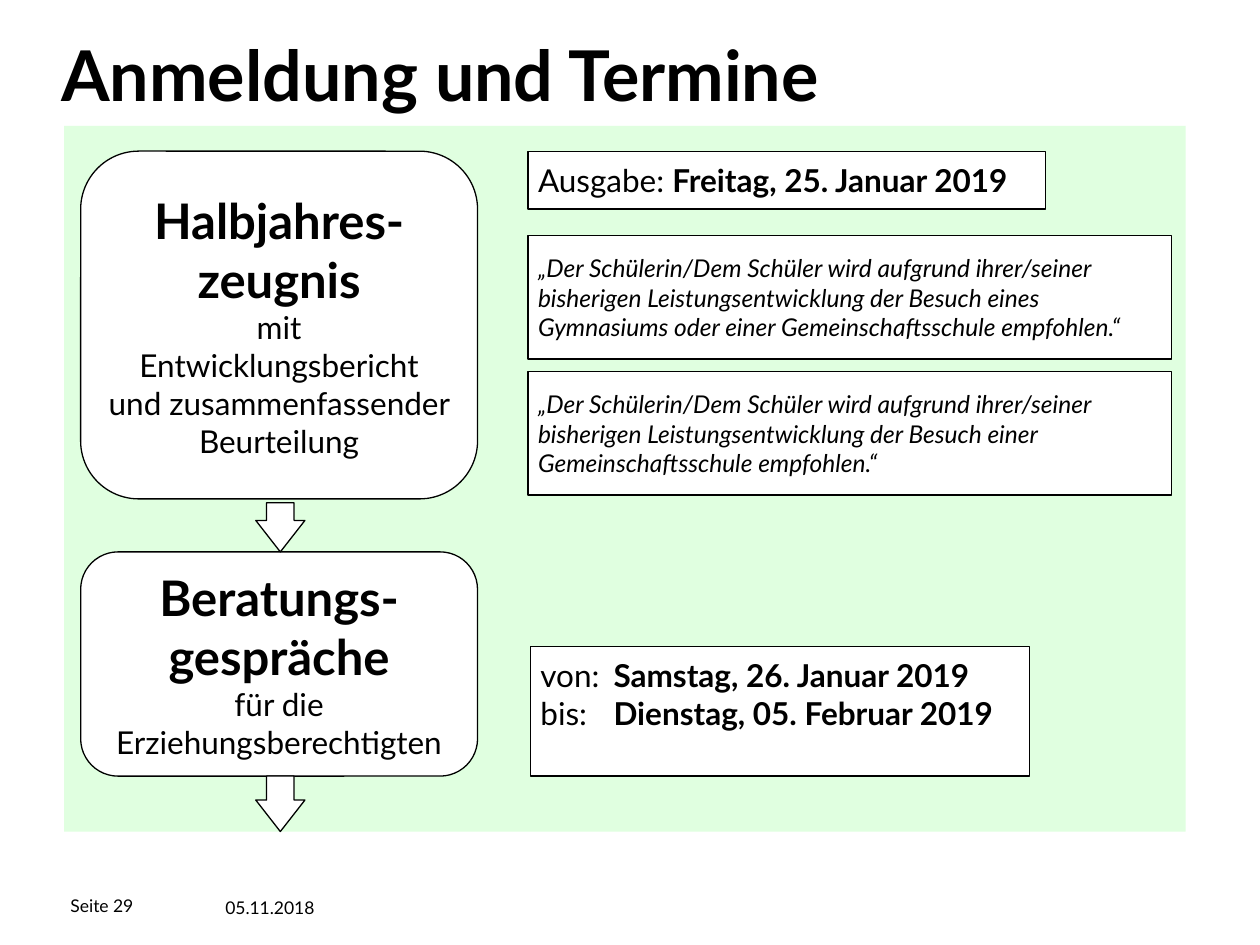
import pptx
import pptx.dml.color
import pptx.enum.shapes
import pptx.enum.text
import pptx.oxml
import pptx.oxml.ns
import pptx.util
from pptx.util import Inches

BLACK = pptx.dml.color.RGBColor(0x00, 0x00, 0x00)
WHITE = pptx.dml.color.RGBColor(0xFF, 0xFF, 0xFF)
GREEN = pptx.dml.color.RGBColor(0xCC, 0xFF, 0xCC)
FONT = "Lato"
SHAPES = pptx.enum.shapes.MSO_SHAPE
ANCHOR = pptx.enum.text.MSO_ANCHOR
ALIGN = pptx.enum.text.PP_ALIGN

STEP_LEFT, STEP_WIDTH = 0.64, 3.15
NOTE_LEFT = 4.19
ARROW_LEFT, ARROW_WIDTH = 2.03, 0.39
TAB_POSITION = 0.58


def add_box(slide, kind, left, top, width, height, fill=WHITE, outlined=True):
    shape = slide.shapes.add_shape(
        kind, Inches(left), Inches(top), Inches(width), Inches(height))
    shape.shadow.inherit = False
    shape.fill.solid()
    shape.fill.fore_color.rgb = fill
    if outlined:
        shape.line.color.rgb = BLACK
        shape.line.width = pptx.util.Pt(0.75)
    else:
        shape.line.fill.background()
    return shape


def set_frame(shape, margin_x, margin_y, anchor):
    frame = shape.text_frame
    frame.word_wrap = True
    frame.vertical_anchor = anchor
    frame.margin_left = frame.margin_right = Inches(margin_x)
    frame.margin_top = frame.margin_bottom = Inches(margin_y)
    return frame


def format_paragraph(paragraph, size, bold=False, italic=False, align=ALIGN.LEFT):
    paragraph.alignment = align
    for run in paragraph.runs:
        font = run.font
        font.name, font.size, font.color.rgb = FONT, pptx.util.Pt(size), BLACK
        font.bold, font.italic = bold, italic


def add_label(slide, text, left, top, width, height, size, bold=False,
              margins=(0.1, 0.05), anchor=ANCHOR.TOP):
    box = slide.shapes.add_textbox(
        Inches(left), Inches(top), Inches(width), Inches(height))
    frame = set_frame(box, *margins, anchor)
    frame.text = text
    format_paragraph(frame.paragraphs[0], size, bold)


def add_panel(slide):
    """Add the half-transparent green background area."""
    panel = add_box(slide, SHAPES.RECTANGLE, 0.51, 1, 8.9, 5.6, GREEN, outlined=False)
    color = panel.fill._xPr.find(".//" + pptx.oxml.ns.qn("a:srgbClr"))
    color.append(pptx.oxml.parse_xml(
        f'<a:alpha {pptx.oxml.ns.nsdecls("a")} val="60000"/>'))


def add_step(slide, top, height, margin_y, heading, detail):
    step = add_box(slide, SHAPES.ROUNDED_RECTANGLE, STEP_LEFT, top, STEP_WIDTH, height)
    step.adjustments[0] = 0.167
    frame = set_frame(step, 0.04, margin_y, ANCHOR.MIDDLE)
    frame.text = heading
    format_paragraph(frame.paragraphs[0], 28, bold=True, align=ALIGN.CENTER)
    paragraph = frame.add_paragraph()
    paragraph.text = detail
    format_paragraph(paragraph, 18, align=ALIGN.CENTER)


def add_quote(slide, top, text):
    quote = add_box(slide, SHAPES.RECTANGLE, NOTE_LEFT, top, 5.11, 0.98)
    frame = set_frame(quote, 0.08, 0.08, ANCHOR.MIDDLE)
    frame.text = text
    format_paragraph(frame.paragraphs[0], 14, italic=True)


def add_tab_stop(paragraph):
    properties = paragraph._p.get_or_add_pPr()
    properties.append(pptx.oxml.parse_xml(
        f'<a:tabLst {pptx.oxml.ns.nsdecls("a")}>'
        f'<a:tab pos="{Inches(TAB_POSITION)}" algn="l"/></a:tabLst>'))


def add_dates(slide, left, top, width, height, entries, anchor):
    """Add a box with one line per entry: a plain label and a bold date."""
    box = add_box(slide, SHAPES.RECTANGLE, left, top, width, height)
    frame = set_frame(box, 0.08, 0.08, anchor)
    for index, (label, date) in enumerate(entries):
        paragraph = frame.add_paragraph() if index else frame.paragraphs[0]
        if label.endswith("\t"):
            add_tab_stop(paragraph)
        paragraph.text = label
        paragraph.add_run().text = date
        format_paragraph(paragraph, 18)
        paragraph.runs[-1].font.bold = True


def add_arrow(slide, top, height):
    arrow = add_box(slide, SHAPES.DOWN_ARROW, ARROW_LEFT, top, ARROW_WIDTH, height)
    arrow.adjustments[0] = 0.56
    arrow.adjustments[1] = 0.64


def main():
    presentation = pptx.Presentation()
    presentation.slide_width, presentation.slide_height = Inches(10), Inches(7.5)
    slide = presentation.slides.add_slide(presentation.slide_layouts[6])

    add_label(slide, "Seite 29", 0.56, 7.07, 1.26, 0.24, 10,
              margins=(0, 0), anchor=ANCHOR.MIDDLE)
    add_label(slide, "05.11.2018", 1.69, 7.07, 1.26, 0.24, 10)
    add_panel(slide)
    add_label(slide, "Anmeldung und Termine", 0.39, 0.2, 6.69, 0.77, 40, bold=True)

    add_step(slide, 1.2, 2.76, 0.39, "Halbjahres-zeugnis",
             "mit\vEntwicklungsbericht\vund zusammenfassender Beurteilung")
    add_quote(slide, 1.87,
              "„Der Schülerin/Dem Schüler wird aufgrund ihrer/seiner bisherigen "
              "Leistungsentwicklung der Besuch eines Gymnasiums oder einer "
              "Gemeinschaftsschule empfohlen.“")
    add_dates(slide, NOTE_LEFT, 1.2, 4.11, 0.46,
              [("Ausgabe: ", "Freitag, 25. Januar 2019")], ANCHOR.MIDDLE)
    add_quote(slide, 2.95,
              "„Der Schülerin/Dem Schüler wird aufgrund ihrer/seiner bisherigen "
              "Leistungsentwicklung der Besuch einer Gemeinschaftsschule empfohlen.“")

    add_step(slide, 4.38, 1.78, 0.2, "Beratungs-gespräche",
             "für die Erziehungsberechtigten")
    add_dates(slide, 4.21, 5.13, 3.96, 1.03,
              [("von:\t", "Samstag, 26. Januar 2019"),
               ("bis:\t", "Dienstag, 05. Februar 2019")], ANCHOR.TOP)

    add_arrow(slide, 3.99, 0.39)
    add_arrow(slide, 6.16, 0.44)
    presentation.save("out.pptx")


if __name__ == "__main__":
    main()
